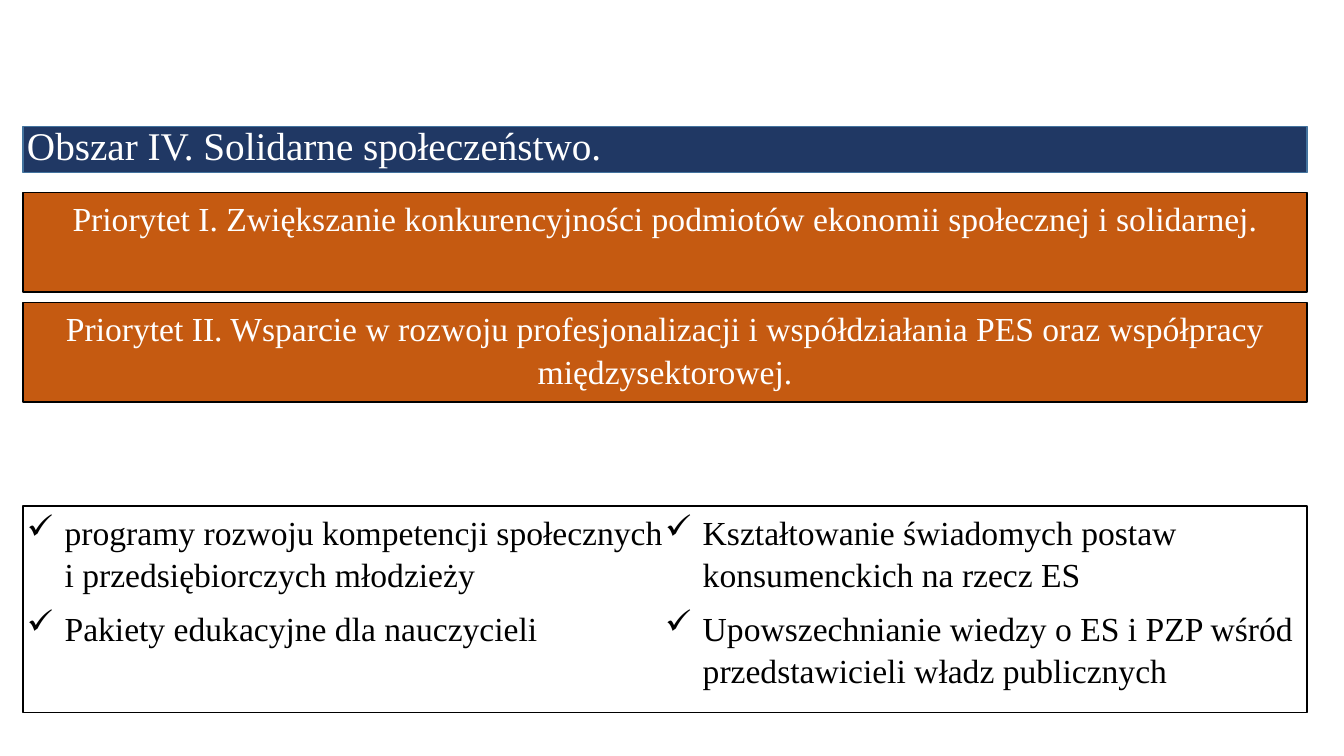
from pptx import Presentation
from pptx.dml.color import RGBColor
from pptx.enum.shapes import MSO_SHAPE
from pptx.enum.text import MSO_ANCHOR, MSO_AUTO_SIZE, PP_ALIGN
from pptx.oxml.ns import qn
from pptx.util import Cm, Pt
from lxml.etree import SubElement

LEFT, WIDTH = 0.58, 32.36
PRIORITY_TOP, PRIORITY_HEIGHT, PRIORITY_STEP = 4.85, 2.51, 2.77
PRIORITIES = [
    "Priorytet I. Zwiększanie konkurencyjności podmiotów ekonomii społecznej i solidarnej.",
    "Priorytet II. Wsparcie w rozwoju profesjonalizacji i współdziałania PES oraz współpracy międzysektorowej.",
]
ACTIONS = [
    ("programy rozwoju kompetencji społecznych i przedsiębiorczych młodzieży", 8),
    ("Pakiety edukacyjne dla nauczycieli", 30),
    ("Kształtowanie świadomych postaw konsumenckich na rzecz ES", 8),
    ("Upowszechnianie wiedzy o ES i PZP wśród przedstawicieli władz publicznych", 8),
]


def colour(value):
    return RGBColor.from_string(value)


def assign(target, values):
    for name, value in values.items():
        setattr(target, name, value)


class PageBuilder:
    """Draws the framed text boxes of one page in a shared style."""

    font = "Times New Roman"
    frame = {"word_wrap": True, "auto_size": MSO_AUTO_SIZE.NONE,
             "margin_left": Cm(0.1), "margin_right": Cm(0.1),
             "margin_top": Cm(0.1), "margin_bottom": Cm(0.1)}

    def __init__(self, deck):
        self.page = deck.slides.add_slide(deck.slide_layouts[5])

    def dress(self, box, top, height, fill, line, anchor):
        assign(box, {"left": Cm(LEFT), "top": Cm(top), "width": Cm(WIDTH), "height": Cm(height)})
        if fill:
            box.fill.solid()
            box.fill.fore_color.rgb = colour(fill)
        else:
            box.fill.background()
        box.line.color.rgb = colour(line)
        box.line.width = Pt(1)
        assign(box.text_frame, {**self.frame, "vertical_anchor": anchor})

    def add_words(self, para, text, size, ink, align=PP_ALIGN.LEFT, after=8):
        assign(para, {"alignment": align, "line_spacing": 1.05,
                      "space_before": Pt(0), "space_after": Pt(after)})
        span = para.add_run()
        span.text = text
        assign(span.font, {"name": self.font, "size": Pt(size)})
        span.font.color.rgb = colour(ink)

    def rectangle(self, top, height, fill):
        box = self.page.shapes.add_shape(MSO_SHAPE.RECTANGLE, 0, 0, 0, 0)
        box.shadow.inherit = False
        self.dress(box, top, height, fill, "000000", MSO_ANCHOR.TOP)
        return box.text_frame

    def title(self, text):
        box = self.page.shapes.title
        self.dress(box, 3.18, 1.17, "203864", "43739E", MSO_ANCHOR.BOTTOM)
        self.add_words(box.text_frame.paragraphs[0], text, 28, "FFFFFF")

    def priority(self, text, top):
        frame = self.rectangle(top, PRIORITY_HEIGHT, "C55A11")
        self.add_words(frame.paragraphs[0], text, 24, "FFFFFF", PP_ALIGN.CENTER)

    def checklist(self, items):
        frame = self.rectangle(12.75, 5.21, None)
        frame._txBody.bodyPr.set("numCol", "2")
        for index, (text, after) in enumerate(items):
            para = frame.add_paragraph() if index else frame.paragraphs[0]
            properties = para._p.get_or_add_pPr()
            properties.set("marL", str(Cm(0.95)))
            properties.set("indent", str(-Cm(0.95)))
            SubElement(properties, qn("a:buChar")).set("char", "✓")
            self.add_words(para, text, 24, "000000", after=after)


def main():
    deck = Presentation()
    assign(deck, {"slide_width": Cm(33.87), "slide_height": Cm(19.05)})
    builder = PageBuilder(deck)
    builder.title("Obszar IV. Solidarne społeczeństwo.")
    for index, text in enumerate(PRIORITIES):
        builder.priority(text, PRIORITY_TOP + index * PRIORITY_STEP)
    builder.checklist(ACTIONS)
    deck.save("out.pptx")


if __name__ == "__main__":
    main()
